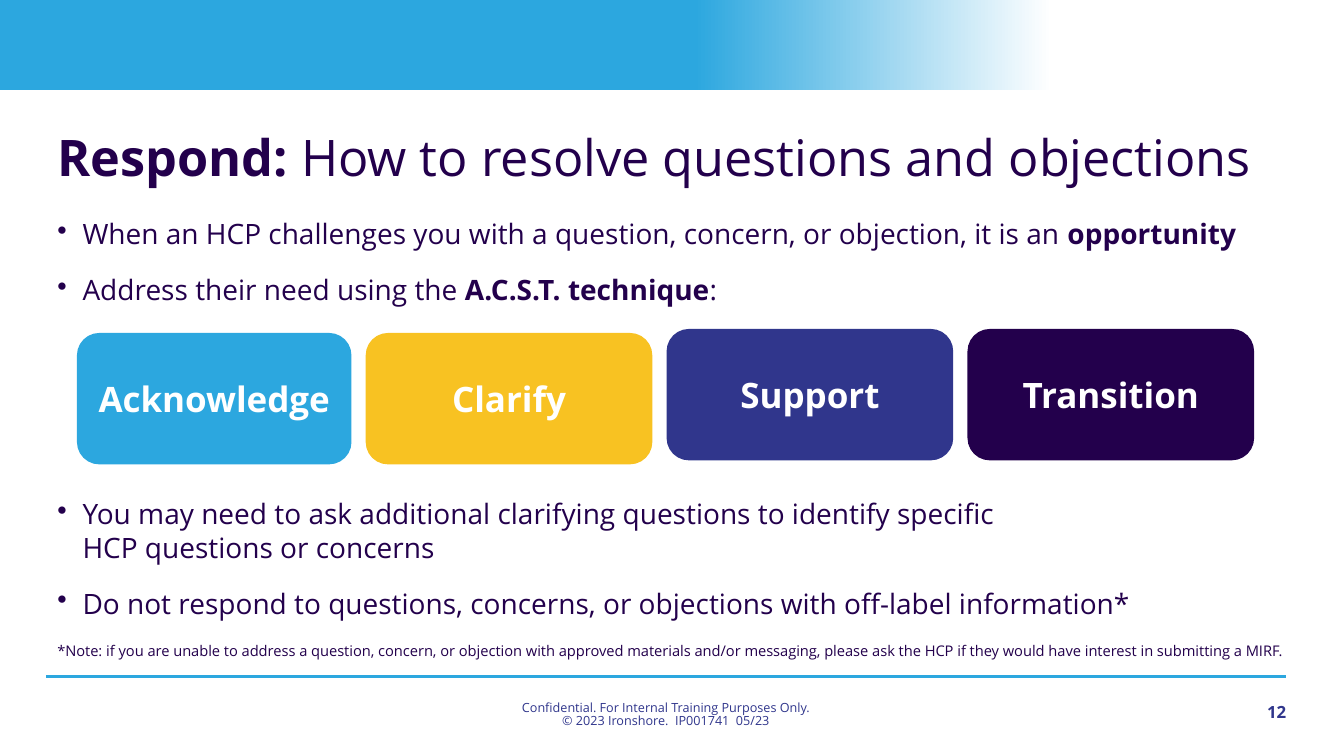
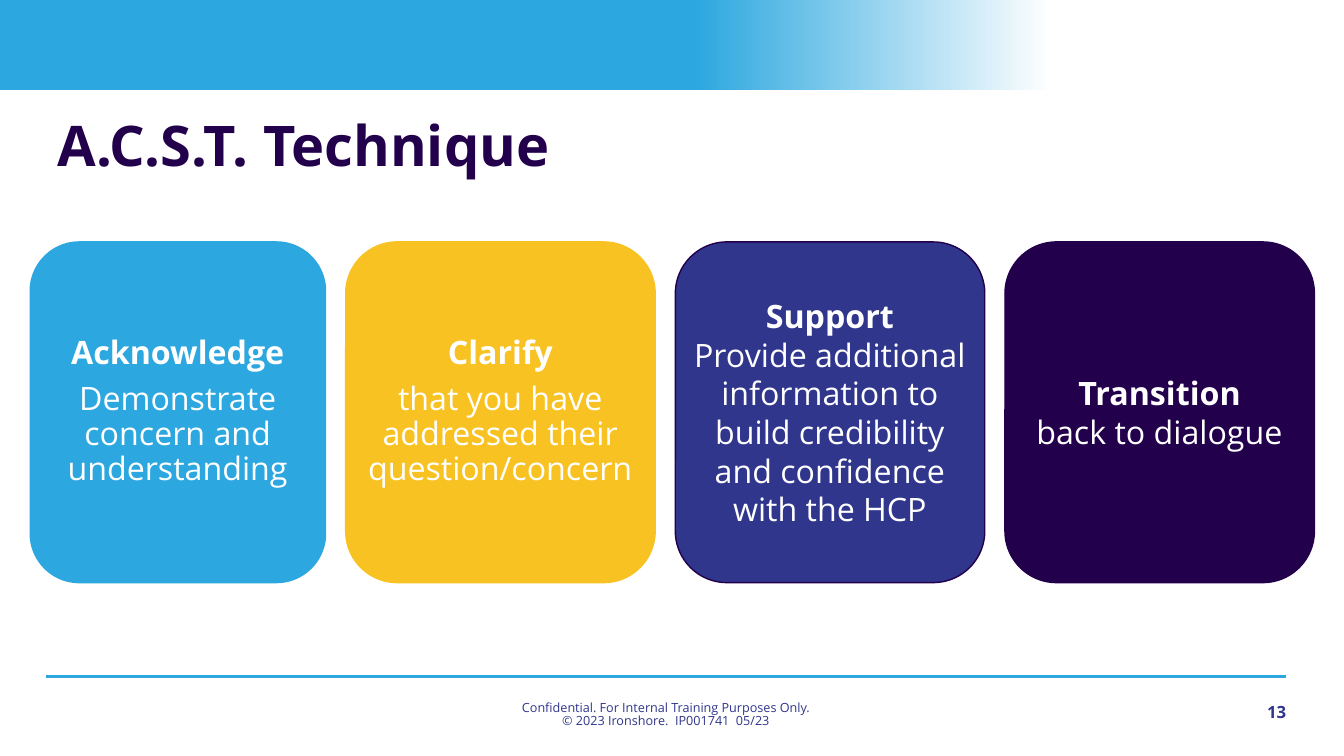
import dataclasses

import lxml.etree
import pptx
import pptx.dml.color
import pptx.enum.shapes
import pptx.enum.text
import pptx.oxml.ns
import pptx.util

ALIGN = pptx.enum.text.PP_ALIGN
ANCHOR = pptx.enum.text.MSO_ANCHOR
SHAPE = pptx.enum.shapes.MSO_SHAPE


@dataclasses.dataclass(frozen=True)
class Theme:
    """Colours, font and type sizes of the whole deck."""
    sky: str = "2CA7DF"
    gold: str = "F8C222"
    indigo: str = "30368C"
    plum: str = "23004C"
    white: str = "FFFFFF"
    font: str = "Open Sans"
    headline: float = 36
    short_headline: float = 40
    tile: float = 25
    card: float = 23
    body: float = 20
    page: float = 12
    note: float = 10.5
    footer: float = 9


THEME = Theme()
COLUMNS, ROWS = 133.33, 75  # grid cells of a tenth of an inch
FOOTER = ["Confidential. For Internal Training Purposes Only.",
          "© 2023 Ironshore.  IP001741  05/23"]


def rgb(colour):
    return pptx.dml.color.RGBColor.from_string(colour)


def cells(*counts):
    return [pptx.util.Inches(count / 10) for count in counts]


class Deck:
    """Holds the style and the current slide."""

    def __init__(self, theme):
        self.theme = theme
        self.show = pptx.Presentation()
        self.show.slide_width, self.show.slide_height = cells(COLUMNS, ROWS)
        self.slide = None

    def add_slide(self, number):
        self.slide = self.show.slides.add_slide(self.show.slide_layouts[5])
        self.band()
        self.rule(4.6, 127.6, 67.1)
        self.text((39.1, 69.1, 53.9, 3.7), FOOTER, self.theme.footer,
                  self.theme.indigo, align=ALIGN.CENTER, spacing=0.9)
        self.text((122.6, 69.6, 5, 1.9), [[(number, True)]], self.theme.page,
                  self.theme.indigo, align=ALIGN.RIGHT, insets=(1, 0, 0, 0))

    def typeset(self, frame, paragraphs, size, colour, align=ALIGN.LEFT,
                spacing=None, after=0, before=0, bullet=False,
                anchor=ANCHOR.TOP, insets=(1, 0.5, 1, 0.5)):
        """Each paragraph is a string or a list of (text, bold) runs."""
        frame.word_wrap = True
        frame.auto_size = pptx.enum.text.MSO_AUTO_SIZE.NONE
        frame.vertical_anchor = anchor
        (frame.margin_left, frame.margin_top,
         frame.margin_right, frame.margin_bottom) = cells(*insets)
        for index, runs in enumerate(paragraphs):
            paragraph = frame.add_paragraph() if index else frame.paragraphs[0]
            runs = [(runs, False)] if isinstance(runs, str) else runs
            if bullet:
                self.bullet(paragraph, colour)
            self.style(paragraph, size, colour)
            paragraph.font.bold = runs[0][1]
            paragraph.alignment = align
            paragraph.line_spacing = spacing
            paragraph.space_before = pptx.util.Pt(before if index else 0)
            paragraph.space_after = pptx.util.Pt(after)
            for words, bold in runs:
                for number, line in enumerate(words.split("\n")):
                    if number:
                        paragraph.add_line_break()
                    run = paragraph.add_run()
                    run.text = line
                    if bold != runs[0][1]:
                        run.font.bold = bold

    def style(self, paragraph, size, colour):
        paragraph.font.name = self.theme.font
        paragraph.font.size = pptx.util.Pt(size)
        paragraph.font.color.rgb = rgb(colour)

    def bullet(self, paragraph, colour):
        properties = paragraph._p.get_or_add_pPr()
        properties.set("marL", str(pptx.util.Inches(0.25)))
        properties.set("indent", str(-pptx.util.Inches(0.25)))
        tag = pptx.oxml.ns.qn
        tint = lxml.etree.SubElement(properties, tag("a:buClr"))
        lxml.etree.SubElement(tint, tag("a:srgbClr"), val=colour)
        lxml.etree.SubElement(properties, tag("a:buChar"), char="•")

    def title(self, runs, size, height):
        heading = self.slide.shapes.title
        (heading.left, heading.top,
         heading.width, heading.height) = cells(4.7, 12.5, 122.7, height)
        self.typeset(heading.text_frame, [runs], size, self.theme.plum,
                     spacing=0.9, anchor=ANCHOR.MIDDLE)

    def text(self, box, paragraphs, size, colour, **options):
        area = self.slide.shapes.add_textbox(*cells(*box))
        self.typeset(area.text_frame, paragraphs, size, colour, **options)

    def band(self):
        """Top band that fades to white on the right."""
        band = self.slide.shapes.add_shape(
            SHAPE.RECTANGLE, *cells(0, 0, 104.4, 8.9))
        band.shadow.inherit = False
        band.line.fill.background()
        band.fill.gradient()
        band.fill.gradient_angle = 0
        fade = [(0.66, self.theme.sky), (1, self.theme.white)]
        for stop, (position, colour) in zip(band.fill.gradient_stops, fade):
            stop.position = position
            stop.color.rgb = rgb(colour)

    def rule(self, left, right, row):
        rule = self.slide.shapes.add_connector(
            pptx.enum.shapes.MSO_CONNECTOR.STRAIGHT,
            *cells(left, row, right, row))
        rule.line.color.rgb = rgb(self.theme.sky)
        rule.line.width = pptx.util.Pt(2.5)
        lxml.etree.SubElement(rule._element.spPr,
                              pptx.oxml.ns.qn("a:effectLst"))

    def card(self, box, fill, outline, paragraphs, size, **options):
        card = self.slide.shapes.add_shape(SHAPE.ROUNDED_RECTANGLE, *cells(*box))
        card.shadow.inherit = False
        card.fill.solid()
        card.fill.fore_color.rgb = rgb(fill)
        card.line.color.rgb = rgb(outline)
        card.line.width = pptx.util.Pt(1)
        self.typeset(card.text_frame, paragraphs, size, self.theme.white,
                     align=ALIGN.CENTER, anchor=ANCHOR.MIDDLE,
                     insets=(0, 0, 0, 0), **options)


def card_spans(left, first, width, gap):
    """Left edge and width of four cards; the first is narrower."""
    spans = [(left, first)]
    for index in range(3):
        spans.append((left + first + gap + index * (width + gap), width))
    return spans


# Step, fill, outline on the detail slide, explanation, line spacing, gap after
STEPS = [
    ("Acknowledge", THEME.sky, THEME.sky,
     "Demonstrate concern and understanding", 0.9, 8),
    ("Clarify", THEME.gold, THEME.gold,
     "that you have addressed their question/concern", 0.9, 8),
    ("Support", THEME.indigo, THEME.plum,
     "Provide additional information to build credibility "
     "and confidence with the HCP", 1, 0),
    ("Transition", THEME.plum, THEME.plum, "back to dialogue", 1, 0),
]


def respond_slide(deck):
    deck.add_slide("12")
    deck.title([("Respond: ", True),
                ("How to resolve questions and objections", False)],
               THEME.headline, 6.8)

    # Advice above and below the four steps
    advice = dict(size=THEME.body, colour=THEME.plum, before=6, after=10,
                  bullet=True)
    deck.text((4.7, 21, 126.1, 11), [
        [("When an HCP challenges you with a question, concern, "
          "or objection, it is an ", False), ("opportunity", True)],
        [("Address their need using the ", False),
         ("A.C.S.T. technique", True), (":", False)],
    ], **advice)
    deck.text((4.7, 48.8, 126.1, 14.5), [
        "You may need to ask additional clarifying questions "
        "to identify specific\nHCP questions or concerns",
        "Do not respond to questions, concerns, or objections "
        "with off-label information*",
    ], **advice)
    deck.text((4.7, 63.2, 126.1, 3), [
        "*Note: if you are unable to address a question, concern, or objection "
        "with approved materials and/or messaging, please ask the HCP if they "
        "would have interest in submitting a MIRF."], THEME.note, THEME.plum)

    # Step names
    tops = (33.1, 33.1, 32.7, 32.7)
    spans = card_spans(7.7, 27.1, 28.3, 1.55)
    for (left, width), top, step in zip(spans, tops, STEPS):
        name, fill = step[:2]
        deck.card((left, top, width, 12.9), fill, fill, [[(name, True)]],
                  THEME.tile)


def technique_slide(deck):
    deck.add_slide("13")
    deck.title([("A.C.S.T. Technique", True)], THEME.short_headline, 4.4)
    spans = card_spans(3, 29.3, 30.7, 2)
    for (left, width), step in zip(spans, STEPS):
        name, fill, outline, explanation, spacing, after = step
        deck.card((left, 24, width, 33.8), fill, outline,
                  [[(name, True)], explanation], THEME.card,
                  spacing=spacing, after=after)


def main():
    deck = Deck(THEME)
    respond_slide(deck)
    technique_slide(deck)
    deck.show.save("out.pptx")


if __name__ == "__main__":
    main()
